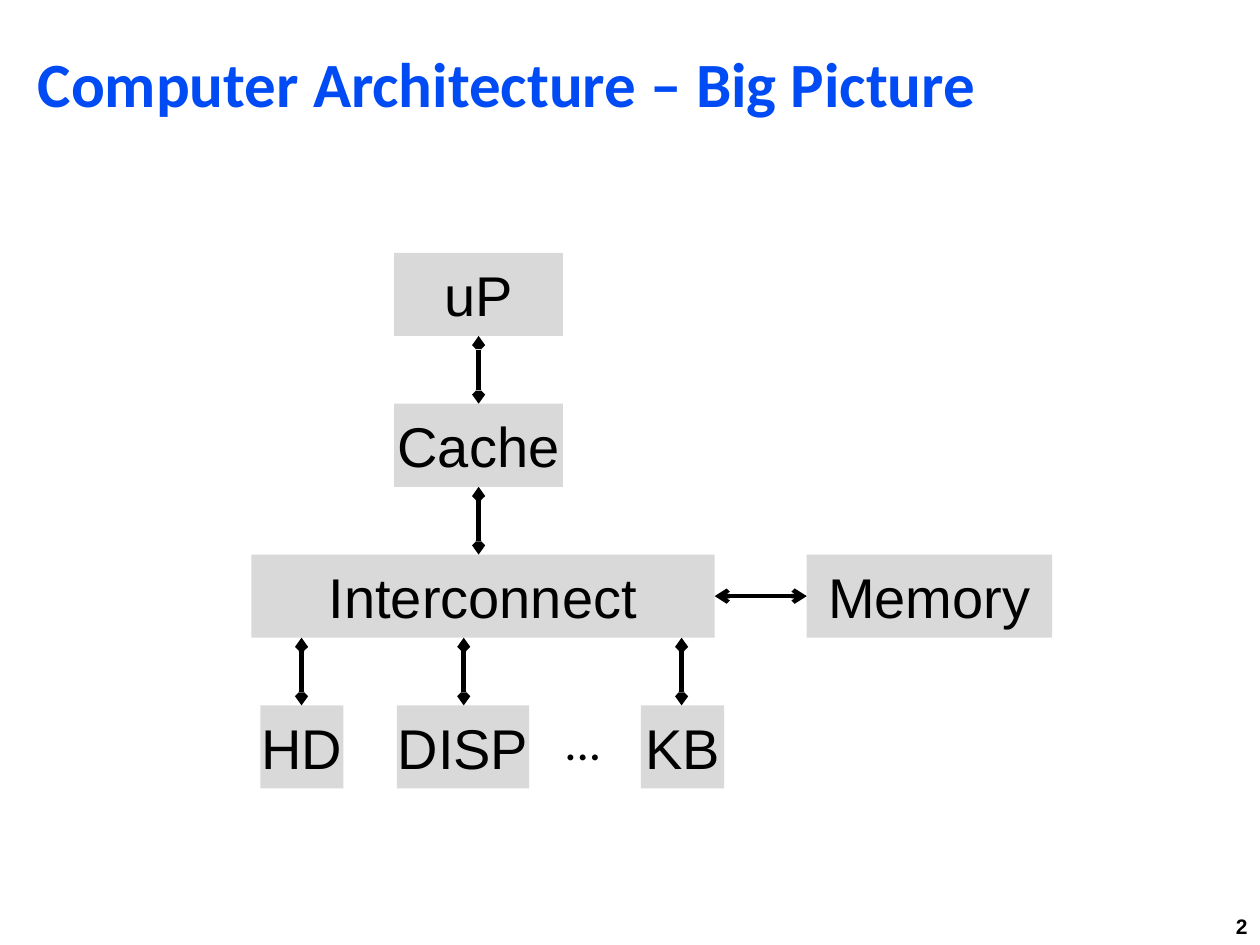
from lxml.etree import SubElement
from pptx import Presentation
from pptx.dml.color import RGBColor
from pptx.enum.shapes import MSO_CONNECTOR as CONN, MSO_SHAPE as SHAPE
from pptx.enum.text import MSO_ANCHOR as ANCHOR, MSO_AUTO_SIZE as FIT, PP_ALIGN as ALIGN
from pptx.oxml.ns import qn
from pptx.util import Pt

TOP, PITCH, BOX_H = 144.5, 86.2, 47.5


def color(hex_text):
    return RGBColor.from_string(hex_text)


def row_top(row):
    return TOP + row * PITCH


class Diagram:
    body_font, head_font = "Arial", "Calibri"
    ink, accent, box_fill = "000000", "004BF3", "D9D9D9"

    def __init__(self, slide):
        self.slide = slide

    def put_text(self, sp, text, size, font, ink=ink, bold=False,
                 align=ALIGN.LEFT, anchor=ANCHOR.TOP, wrap=True):
        tf = sp.text_frame
        tf.auto_size = FIT.NONE
        tf.word_wrap = wrap
        tf.vertical_anchor = anchor
        p = tf.paragraphs[0]
        p.alignment = align
        r = p.add_run()
        r.text = text
        r.font.size = Pt(size)
        r.font.name = font
        r.font.bold = bold
        r.font.color.rgb = color(ink)

    def title(self, text, x, y, w, h):
        sp = self.slide.shapes.title
        sp.left, sp.top, sp.width, sp.height = Pt(x), Pt(y), Pt(w), Pt(h)
        self.put_text(sp, text, 36, self.head_font, self.accent, True, anchor=ANCHOR.BOTTOM)

    def label(self, text, x, y, w, h, size, font, **style):
        sp = self.slide.shapes.add_textbox(Pt(x), Pt(y), Pt(w), Pt(h))
        self.put_text(sp, text, size, font, **style)

    def box(self, text, row, x, w):
        sp = self.slide.shapes.add_shape(
            SHAPE.RECTANGLE, Pt(x), Pt(row_top(row)), Pt(w), Pt(BOX_H))
        sp.shadow.inherit = False
        sp.fill.solid()
        sp.fill.fore_color.rgb = color(self.box_fill)
        sp.line.fill.background()
        self.put_text(sp, text, 32, self.body_font, align=ALIGN.CENTER,
                      anchor=ANCHOR.MIDDLE, wrap=False)

    def arrow(self, x1, y1, x2, y2, width, head_size):
        """Draw a line with an open arrowhead at both ends."""
        sp = self.slide.shapes.add_connector(CONN.STRAIGHT, Pt(x1), Pt(y1), Pt(x2), Pt(y2))
        sp.line.width = Pt(width)
        sp.line.color.rgb = color(self.ink)
        props = sp.element.spPr
        ln = props.find(qn("a:ln"))
        for end in ("a:headEnd", "a:tailEnd"):
            SubElement(ln, qn(end), type="arrow", w=head_size, len=head_size)
        SubElement(props, qn("a:effectLst"))

    def link_down(self, row, x):
        """Join a row to the one below it."""
        self.arrow(x, row_top(row) + BOX_H, x, row_top(row + 1), 3, "sm")


def main():
    prs = Presentation()
    prs.slide_width, prs.slide_height = Pt(720), Pt(540)
    d = Diagram(prs.slides.add_slide(prs.slide_layouts[5]))

    d.title("Computer Architecture – Big Picture", 14.4, 20.9, 692, 51.1)
    for text, row, x, w in [
        ("uP", 0, 225.2, 96.5),
        ("Cache", 1, 225.2, 96.5),
        ("Interconnect", 2, 143.7, 264.7),
        ("Memory", 2, 461, 140.2),
        ("HD", 3, 148.8, 47.5),
        ("DISP", 3, 226.8, 75.6),
        ("KB", 3, 366.3, 47.5),
    ]:
        d.box(text, row, x, w)

    for row, x in [(0, 273.5), (1, 273.5), (2, 172.3), (2, 265), (2, 389.5)]:
        d.link_down(row, x)
    memory_y = row_top(2) + BOX_H / 2
    d.arrow(408.4, memory_y, 461, memory_y, 2.5, "med")

    d.label("...", 315.4, row_top(3), 36, 41, 28, d.head_font, wrap=False)
    d.label("2", 674.6, 518.4, 45.4, 21.6, 12, d.body_font, bold=True, align=ALIGN.RIGHT)

    prs.save("out.pptx")


if __name__ == "__main__":
    main()
